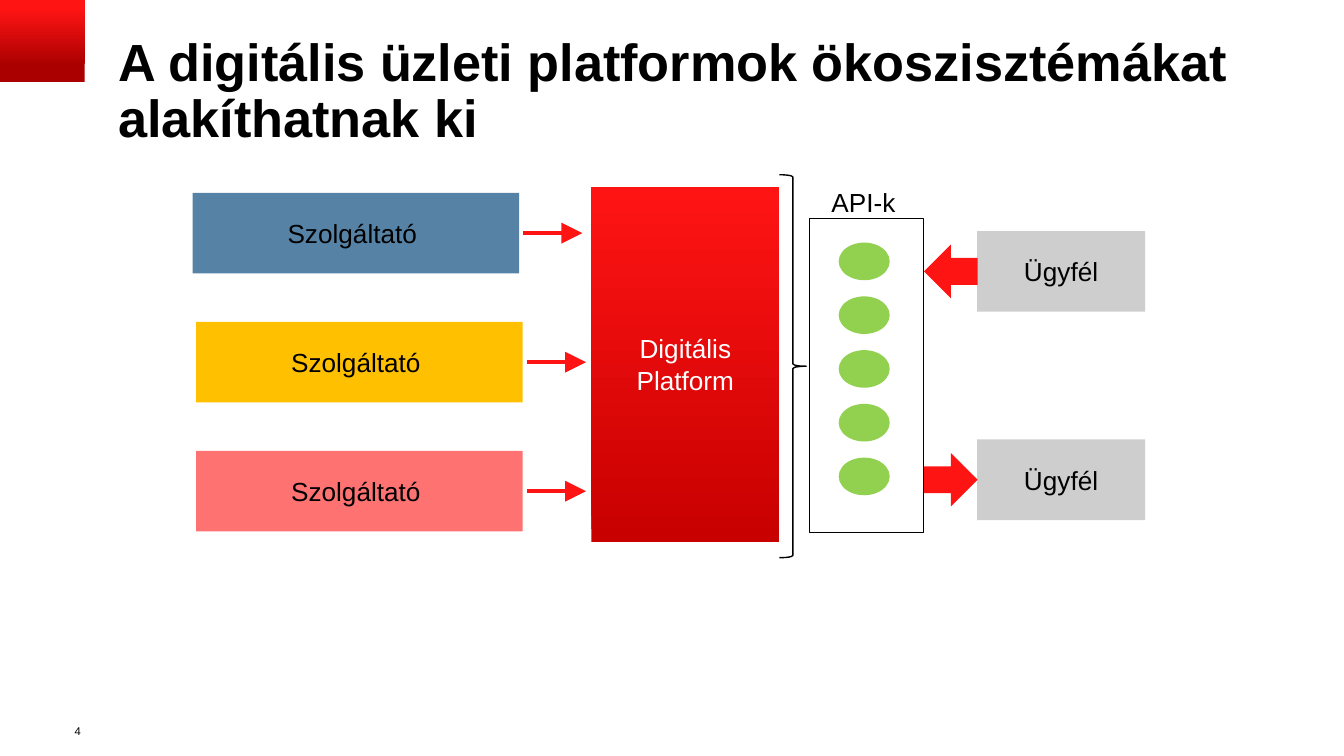
from dataclasses import dataclass
from typing import NamedTuple

import pptx
import pptx.dml.color
import pptx.enum.shapes
import pptx.enum.text
import pptx.oxml
import pptx.oxml.ns
import pptx.util

Shape = pptx.enum.shapes.MSO_SHAPE
Align = pptx.enum.text.PP_ALIGN
Anchor = pptx.enum.text.MSO_ANCHOR

COLUMNS, ROWS = 100, 56.25
CELL = pptx.util.Inches(0.1)


@dataclass(frozen=True)
class Theme:
    font: str = "Arial"
    ink: str = "000000"
    paper: str = "FFFFFF"
    red: str = "FF1414"
    platform_dark: str = "C80000"
    corner_dark: str = "AA0000"
    client: str = "CECECE"
    api: str = "92D050"
    title_size: float = 28
    label_size: float = 14
    number_size: float = 6


class Area(NamedTuple):
    left: float
    top: float
    width: float
    height: float


class Provider(NamedTuple):
    left: float
    color: str


class Client(NamedTuple):
    top: float
    arrow: int


THEME = Theme()
PROVIDERS = [Provider(14.33, "5582A5"), Provider(14.6, "FFC000"), Provider(14.6, "FF7272")]
PROVIDER_TOP, PROVIDER_STEP = 14.35, 9.6
PROVIDER_WIDTH, BOX_HEIGHT = 24.3, 6
FLOW_GAP, FLOW_LENGTH = 0.3, 4.4
CLIENTS = [Client(17.2, Shape.LEFT_ARROW), Client(32.7, Shape.RIGHT_ARROW)]
CLIENT_LEFT, CLIENT_WIDTH = 72.7, 12.5
ARROW_LEFT, ARROW_SIZE = 68.75, 4
API_COUNT, API_TOP, API_STEP = 5, 18.05, 4


def cells(count: float) -> int:
    return round(count * CELL)


def rgb(color: str) -> pptx.dml.color.RGBColor:
    return pptx.dml.color.RGBColor.from_string(color)


def write(frame, lines: list[str], size: float, color: str = THEME.ink,
          align=Align.CENTER, bold: bool = False) -> None:
    frame.text = "\n".join(lines)
    for paragraph in frame.paragraphs:
        paragraph.alignment = align
        paragraph.font.name = THEME.font
        paragraph.font.size = pptx.util.Pt(size)
        paragraph.font.bold = bold
        paragraph.font.color.rgb = rgb(color)


def add_shape(slide, kind: int, area: Area, fill: str | None = None,
              outline: float | None = None):
    shape = slide.shapes.add_shape(kind, *map(cells, area))
    shape.shadow.inherit = False
    if fill:
        shape.fill.solid()
        shape.fill.fore_color.rgb = rgb(fill)
    else:
        shape.fill.background()
    if outline:
        shape.line.color.rgb = rgb(THEME.ink)
        shape.line.width = pptx.util.Pt(outline)
    else:
        shape.line.fill.background()
    return shape


def shade_upwards(shape, stops: list[tuple[float, str]]) -> None:
    shape.fill.gradient()
    shape.fill.gradient_angle = 90
    for stop, (position, color) in zip(shape.fill.gradient_stops, stops):
        stop.position = position
        stop.color.rgb = rgb(color)


def add_text(slide, area: Area, text: str, size: float, align=Align.CENTER,
             anchor=Anchor.MIDDLE, wrap: bool = True) -> None:
    frame = slide.shapes.add_textbox(*map(cells, area)).text_frame
    frame.word_wrap = wrap
    frame.vertical_anchor = anchor
    write(frame, [text], size, align=align)


def add_flow(slide, left: float, middle: float) -> None:
    flow = slide.shapes.add_connector(
        pptx.enum.shapes.MSO_CONNECTOR.STRAIGHT,
        cells(left), cells(middle), cells(left + FLOW_LENGTH), cells(middle))
    flow.line.color.rgb = rgb(THEME.red)
    flow.line.width = pptx.util.Pt(2.25)
    namespace = pptx.oxml.ns.nsdecls("a")
    properties = flow._element.spPr
    properties.find(pptx.oxml.ns.qn("a:ln")).append(pptx.oxml.parse_xml(
        f'<a:tailEnd {namespace} type="triangle" w="lg" len="lg"/>'))
    properties.append(pptx.oxml.parse_xml(f"<a:effectLst {namespace}/>"))


def add_title(slide, area: Area, text: str) -> None:
    title = slide.shapes.title
    title.left, title.top, title.width, title.height = map(cells, area)
    frame = title.text_frame
    frame.margin_left = frame.margin_right = frame.margin_top = frame.margin_bottom = 0
    frame.word_wrap = True
    frame.auto_size = pptx.enum.text.MSO_AUTO_SIZE.NONE
    frame.vertical_anchor = Anchor.TOP
    write(frame, [text], THEME.title_size, align=Align.LEFT, bold=True)
    frame.paragraphs[0].line_spacing = 0.9


def add_provider(slide, provider: Provider, row: int) -> None:
    top = PROVIDER_TOP + row * PROVIDER_STEP
    box = add_shape(slide, Shape.RECTANGLE,
                    Area(provider.left, top, PROVIDER_WIDTH, BOX_HEIGHT), provider.color)
    box.text_frame.margin_right = cells(1.5)
    write(box.text_frame, ["Szolgáltató"], THEME.label_size)
    add_flow(slide, provider.left + PROVIDER_WIDTH + FLOW_GAP, top + BOX_HEIGHT / 2)


def add_client(slide, client: Client) -> None:
    box = add_shape(slide, Shape.RECTANGLE,
                    Area(CLIENT_LEFT, client.top, CLIENT_WIDTH, BOX_HEIGHT), THEME.client)
    write(box.text_frame, ["Ügyfél"], THEME.label_size)
    arrow_top = client.top + (BOX_HEIGHT - ARROW_SIZE) / 2
    add_shape(slide, client.arrow,
              Area(ARROW_LEFT, arrow_top, ARROW_SIZE, ARROW_SIZE), THEME.red)


def main() -> None:
    deck = pptx.Presentation()
    deck.slide_width, deck.slide_height = cells(COLUMNS), cells(ROWS)
    slide = deck.slides.add_slide(deck.slide_layouts[5])

    corner = add_shape(slide, Shape.RECTANGLE, Area(0, 0, 6.3, 6.1))
    shade_upwards(corner, [(0.2, THEME.corner_dark), (0.9, THEME.red)])
    add_title(slide, Area(8.8, 2.7, 90, 6.5),
              "A digitális üzleti platformok ökoszisztémákat alakíthatnak ki")
    add_text(slide, Area(3.9, 53.4, 3.1, 2), "4", THEME.number_size,
             Align.RIGHT, Anchor.TOP, wrap=False)

    for row, provider in enumerate(PROVIDERS):
        add_provider(slide, provider, row)

    platform = add_shape(slide, Shape.RECTANGLE, Area(44, 13.9, 14, 26.4))
    shade_upwards(platform, [(0, THEME.platform_dark), (1, THEME.red)])
    write(platform.text_frame, ["Digitális", "Platform"], THEME.label_size, THEME.paper)

    add_shape(slide, Shape.RIGHT_BRACE, Area(58, 13, 2, 28.5), outline=0.75)
    add_shape(slide, Shape.RECTANGLE, Area(60.2, 16.25, 8.5, 23.4), outline=0.5)
    add_text(slide, Area(60, 13.3, 8.5, 3.4), "API-k", THEME.label_size)
    for row in range(API_COUNT):
        add_shape(slide, Shape.OVAL,
                  Area(62.4, API_TOP + row * API_STEP, 3.8, 2.8), THEME.api)

    for client in CLIENTS:
        add_client(slide, client)

    deck.save("out.pptx")


if __name__ == "__main__":
    main()
